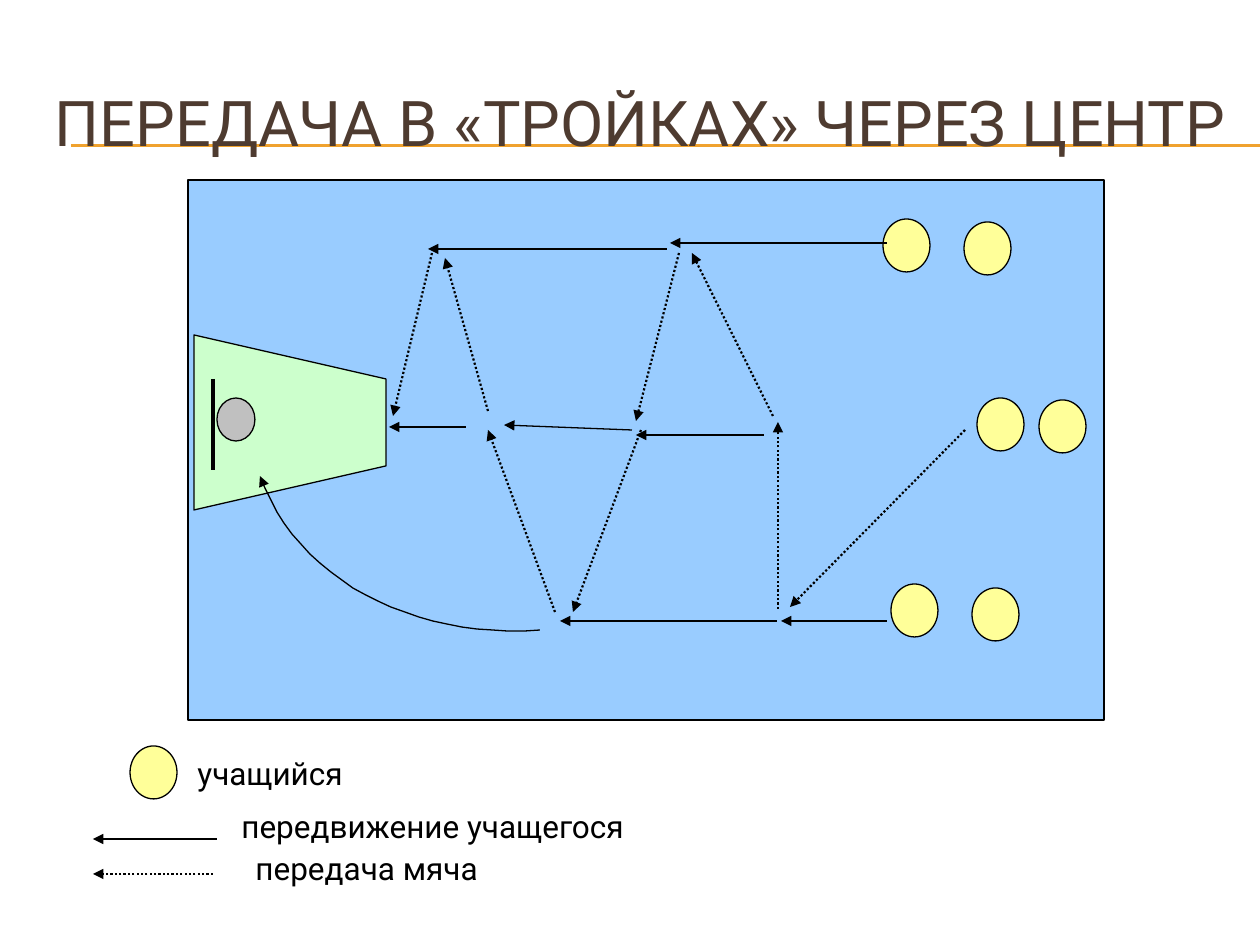
from dataclasses import dataclass

from pptx import Presentation
from pptx import util as u
from pptx.dml.color import RGBColor
from pptx.enum import dml, shapes, text
from pptx.oxml import parse_xml
from pptx.oxml.ns import nsdecls

PX = 914400 / 126


@dataclass(frozen=True)
class Theme:
    """Colours, font and type sizes of the slide."""
    ink: str = "000000"
    head: str = "4E3B30"
    rule: str = "F0A22E"
    court: str = "99CCFF"
    zone: str = "CCFFCC"
    pupil: str = "FFFF99"
    ball: str = "C0C0C0"
    font: str = "Roboto"
    title: int = 36
    body: int = 18
    thin: float = 0.75
    dots: float = 1.25
    thick: float = 2.25


T = Theme()
PUPIL = 47, 53
PUPILS = [(1039, 400), (977, 398), (883, 219), (972, 588), (964, 222),
          (891, 584), (130, 746)]
MOVES = [(887, 621, 781, 621), (887, 243, 670, 243), (764, 435, 636, 435),
         (777, 621, 560, 621), (632, 430, 504, 425), (667, 249, 428, 249),
         (466, 427, 389, 427), (217, 839, 93, 839)]
PASSES = [(965, 430, 790, 607), (778, 609, 778, 422), (773, 416, 692, 253),
          (679, 253, 636, 421), (641, 430, 573, 612), (555, 612, 488, 430),
          (488, 411, 445, 258), (432, 253, 393, 416), (213, 874, 93, 874)]
ZONE = [(194, 510), (386, 466), (386, 379), (194, 335)]
RUN = [(540, 630), (412, 640), (296, 577), (260, 476)]
LABELS = [("учащийся", 185, 748, 697, 50),
          ("передвижение учащегося", 229, 801, 483, 50),
          ("передача мяча", 243, 843, 397, 50)]


def emu(*vals):
    """Turn px lengths into EMU."""
    return [u.Emu(round(v * PX)) for v in vals]


def put(obj, **vals):
    """Set attributes of an object from a dict of values."""
    for name, val in vals.items():
        setattr(obj, name, val)


def stroke(shape, hue=T.ink, wide=T.thin, dots=False, tip=False):
    """Style the outline of a shape or line."""
    shape.line.color.rgb = RGBColor.from_string(hue)
    shape.line.width = u.Pt(wide)
    if dots:
        shape.line.dash_style = dml.MSO_LINE.ROUND_DOT
    if tip:
        shape.line._get_or_add_ln().append(
            parse_xml(f'<a:tailEnd {nsdecls("a")} type="triangle"/>'))


def paint(shape, hue):
    """Give a shape a flat fill and a thin outline."""
    shape.shadow.inherit = False
    shape.fill.solid()
    shape.fill.fore_color.rgb = RGBColor.from_string(hue)
    stroke(shape)


def block(slide, kind, box, hue):
    """Add a filled preset shape."""
    paint(slide.shapes.add_shape(kind, *emu(*box)), hue)


def line(slide, ends, **style):
    """Add a straight line."""
    link = slide.shapes.add_connector(shapes.MSO_CONNECTOR.STRAIGHT, *emu(*ends))
    link.element.spPr.append(parse_xml(f'<a:effectLst {nsdecls("a")}/>'))
    stroke(link, **style)


def outline(slide, pts, close):
    """Add a freeform through the given points."""
    pen = slide.shapes.build_freeform(*pts[0], scale=PX)
    pen.add_line_segments(pts[1:], close=close)
    return pen.convert_to_shape()


def bezier(ctrl, steps=24):
    """Return points along a cubic curve."""
    def at(t):
        s = 1 - t
        mix = s ** 3, 3 * s * s * t, 3 * s * t * t, t ** 3
        return tuple(sum(m * p[i] for m, p in zip(mix, ctrl)) for i in (0, 1))
    return [at(k / steps) for k in range(steps + 1)]


def curve(slide, ctrl):
    """Add a curved arrow."""
    arc = outline(slide, bezier(ctrl), False)
    arc.shadow.inherit = False
    arc.fill.background()
    stroke(arc, tip=True)


def write(shape, words, size, hue, **frame):
    """Fill a shape with one formatted paragraph."""
    put(shape.text_frame, word_wrap=True, **frame)
    para = shape.text_frame.paragraphs[0]
    run = para.add_run()
    run.text = words
    put(run.font, name=T.font, size=u.Pt(size))
    run.font.color.rgb = RGBColor.from_string(hue)
    return para


def heading(slide, words):
    """Place the title over its double rule."""
    head = slide.shapes.title
    put(head, **dict(zip(("left", "top", "width", "height"),
                         emu(42, 63, 1197, 116))))
    para = write(head, words, T.title, T.head, margin_left=0, margin_right=0,
                 vertical_anchor=text.MSO_ANCHOR.MIDDLE)
    para.alignment = text.PP_ALIGN.CENTER
    for y in (145, 146):
        line(slide, (71, y, 1260, y), hue=T.rule)
    head.element.getparent().append(head.element)


def court(slide):
    """Draw the court with its zone, board and ball."""
    block(slide, shapes.MSO_SHAPE.RECTANGLE, (188, 180, 916, 540), T.court)
    paint(outline(slide, ZONE, True), T.zone)
    line(slide, (213, 379, 213, 470), wide=T.thick)
    block(slide, shapes.MSO_SHAPE.OVAL, (217, 398, 38, 43), T.ball)


def main():
    """Build and save the slide."""
    deck = Presentation()
    deck.slide_width, deck.slide_height = emu(1260, 945)
    slide = deck.slides.add_slide(deck.slide_layouts[5])
    heading(slide, "ПЕРЕДАЧА В «ТРОЙКАХ» ЧЕРЕЗ ЦЕНТР")
    court(slide)
    for spot in PUPILS:
        block(slide, shapes.MSO_SHAPE.OVAL, spot + PUPIL, T.pupil)
    for ends in MOVES:
        line(slide, ends, tip=True)
    for ends in PASSES:
        line(slide, ends, wide=T.dots, dots=True, tip=True)
    curve(slide, RUN)
    for words, *box in LABELS:
        write(slide.shapes.add_textbox(*emu(*box)), words, T.body, T.ink)
    deck.save("out.pptx")


if __name__ == "__main__":
    main()
